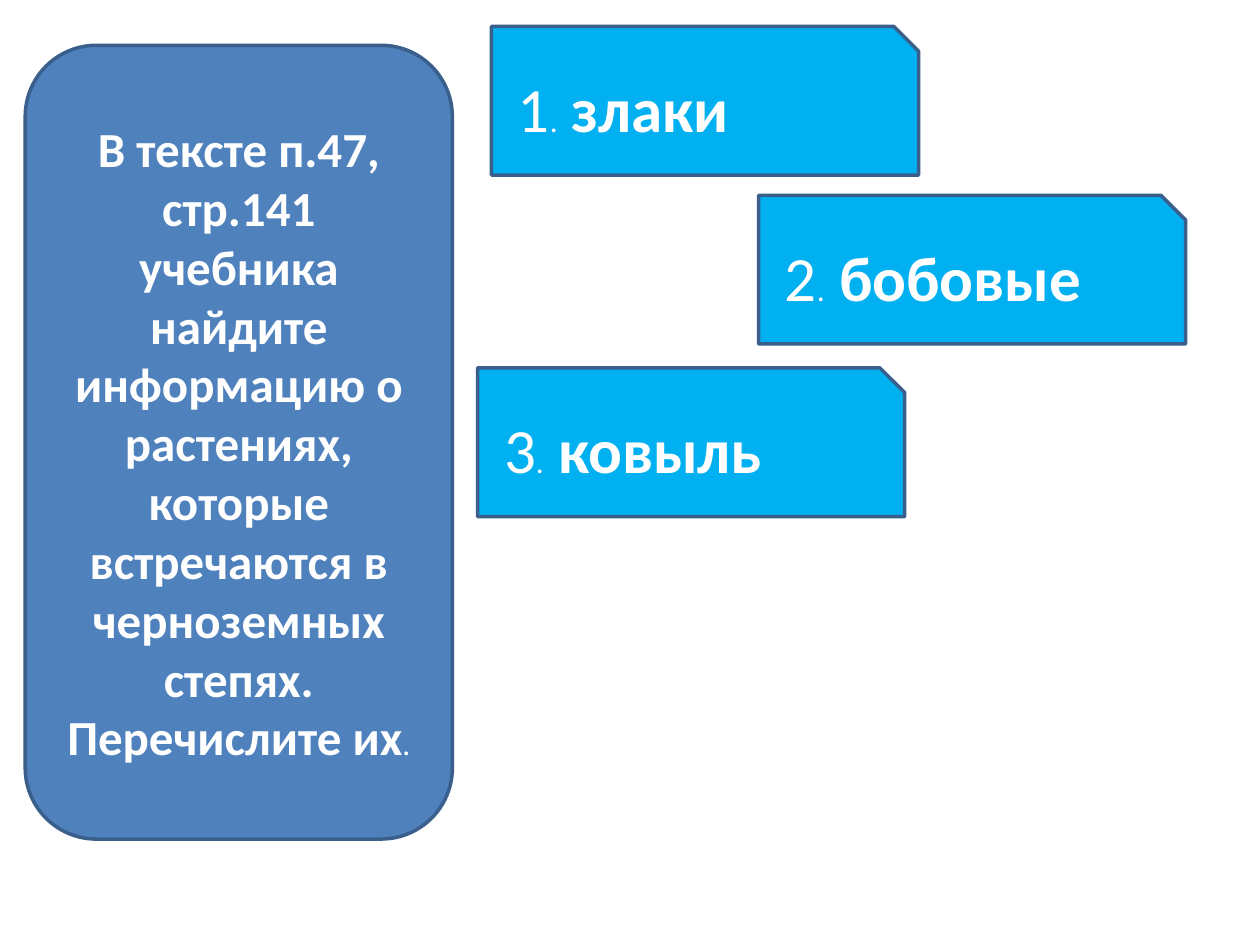
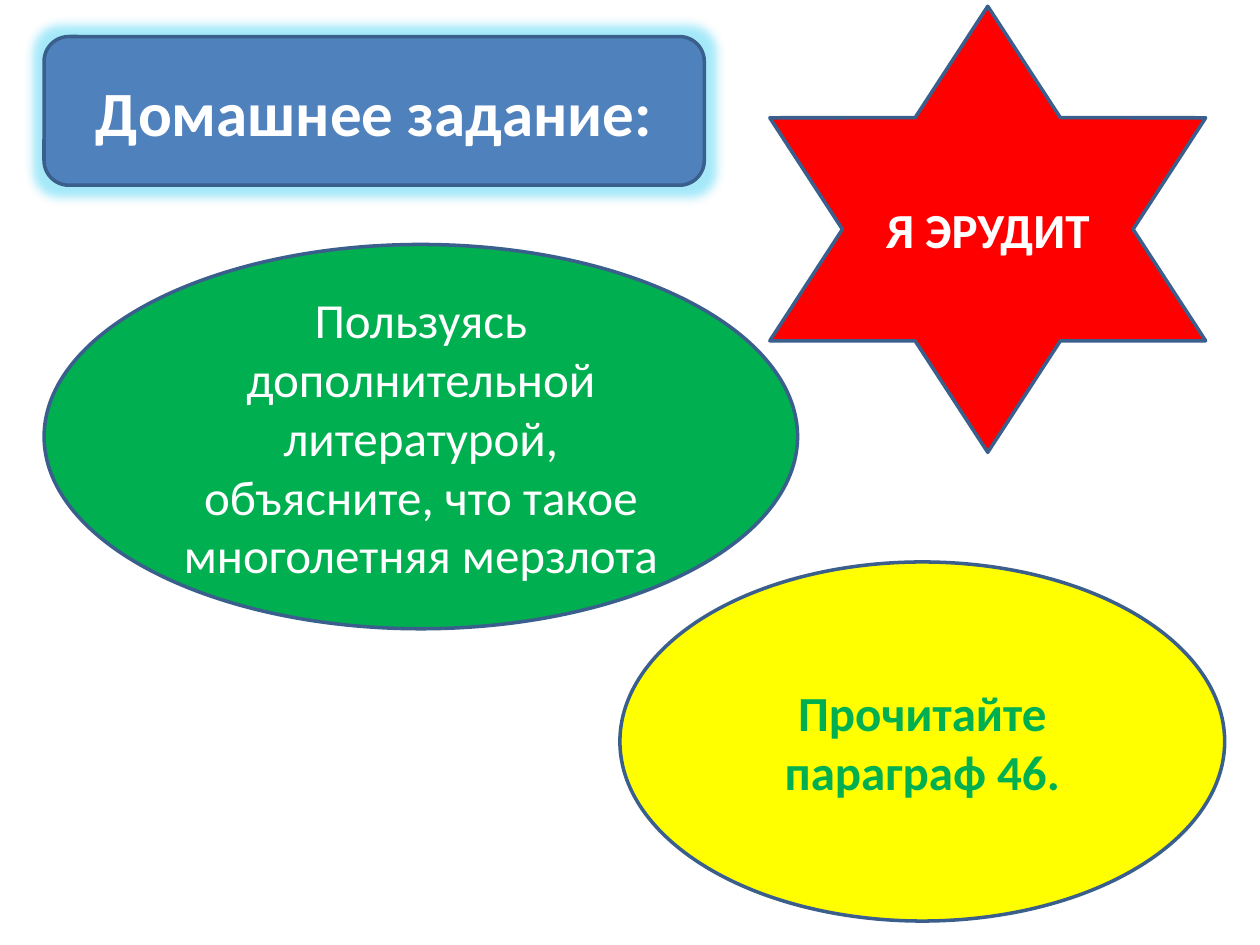
import lxml.etree
import pptx
import pptx.dml.color
import pptx.enum.shapes
import pptx.enum.text
import pptx.oxml.ns
import pptx.util

Inches = pptx.util.Inches
SHAPES = pptx.enum.shapes.MSO_SHAPE
ALIGN = pptx.enum.text.PP_ALIGN

COLORS = {
    "blue": "4F81BD",
    "outline": "3A5F8C",
    "sky": "00B0F0",
    "red": "FF0000",
    "green": "00B050",
    "yellow": "FFFF00",
    "white": "FFFFFF",
    "glow": "1EC8F2",
}
FONT = "Calibri"
TASK_SIZE = 28
HEADING_SIZE = 36
DOT_SIZE = 18
CARD_WIDTH, CARD_HEIGHT = 3.39, 1.18


def rgb(name):
    return pptx.dml.color.RGBColor.from_string(COLORS[name])


def add_text(paragraph, text, size=TASK_SIZE, bold=False, color="white"):
    run = paragraph.add_run()
    run.text = text
    run.font.name = FONT
    run.font.size = pptx.util.Pt(size)
    run.font.bold = bold
    run.font.color.rgb = rgb(color)


def add_figure(slide, preset, box, fill, align=ALIGN.CENTER):
    figure = slide.shapes.add_shape(preset, *(Inches(length) for length in box))
    figure.shadow.inherit = False
    figure.fill.solid()
    figure.fill.fore_color.rgb = rgb(fill)
    figure.line.color.rgb = rgb("outline")
    figure.line.width = pptx.util.Pt(2)
    figure.text_frame.word_wrap = True
    figure.text_frame.vertical_anchor = pptx.enum.text.MSO_ANCHOR.MIDDLE
    paragraph = figure.text_frame.paragraphs[0]
    paragraph.alignment = align
    return figure, paragraph


def add_glow(figure, radius):
    qn = pptx.oxml.ns.qn
    effects = figure._element.spPr.find(qn("a:effectLst"))
    glow = lxml.etree.SubElement(effects, qn("a:glow"), rad=str(pptx.util.Pt(radius)))
    color = lxml.etree.SubElement(glow, qn("a:srgbClr"), val=COLORS["glow"])
    lxml.etree.SubElement(color, qn("a:alpha"), val="40000")


def add_question(slide, box, text):
    _, paragraph = add_figure(slide, SHAPES.ROUNDED_RECTANGLE, box, "blue")
    add_text(paragraph, text, bold=True)
    add_text(paragraph, ".", size=DOT_SIZE)


def add_plant(slide, box, number, plant):
    card, paragraph = add_figure(slide, SHAPES.SNIP_1_RECTANGLE, box, "sky", ALIGN.LEFT)
    card.text_frame.margin_left = Inches(0.21)
    add_text(paragraph, str(number), size=HEADING_SIZE)
    add_text(paragraph, ".", size=DOT_SIZE)
    add_text(paragraph, f" {plant}", size=HEADING_SIZE, bold=True)


def add_heading(slide, box, text):
    heading, paragraph = add_figure(slide, SHAPES.ROUNDED_RECTANGLE, box, "blue")
    add_text(paragraph, text, size=HEADING_SIZE, bold=True)
    add_glow(heading, 11)


def add_assignment(slide, preset, box, fill, text, **text_format):
    _, paragraph = add_figure(slide, preset, box, fill)
    add_text(paragraph, text, **text_format)


def build_plants_slide(slide):
    add_question(
        slide,
        (0.2, 0.36, CARD_WIDTH, 6.3),
        "В тексте п.47, стр.141 учебника найдите информацию о растениях, "
        "которые встречаются в черноземных степях. Перечислите их",
    )
    plants = [("злаки", 3.9, 0.21), ("бобовые", 6.02, 1.55), ("ковыль", 3.79, 2.92)]
    for number, (plant, left, top) in enumerate(plants, 1):
        add_plant(slide, (left, top, CARD_WIDTH, CARD_HEIGHT), number, plant)


def build_homework_slide(slide):
    add_heading(slide, (0.35, 0.29, 5.24, CARD_HEIGHT), "Домашнее задание:")
    add_assignment(slide, SHAPES.STAR_6_POINT, (6.11, 0.05, 3.46, 3.54), "red",
                   "Я ЭРУДИТ", bold=True)
    add_assignment(slide, SHAPES.OVAL, (0.35, 1.94, 5.98, 3.05), "green",
                   "Пользуясь дополнительной литературой, объясните, "
                   "что такое многолетняя мерзлота")
    add_assignment(slide, SHAPES.OVAL, (4.92, 4.46, 4.8, 2.85), "yellow",
                   "Прочитайте параграф 46.", bold=True, color="green")


def main():
    presentation = pptx.Presentation()
    presentation.slide_width = Inches(10)
    presentation.slide_height = Inches(7.5)
    blank = presentation.slide_layouts[6]
    for build in (build_plants_slide, build_homework_slide):
        build(presentation.slides.add_slide(blank))
    presentation.save("out.pptx")


if __name__ == "__main__":
    main()
